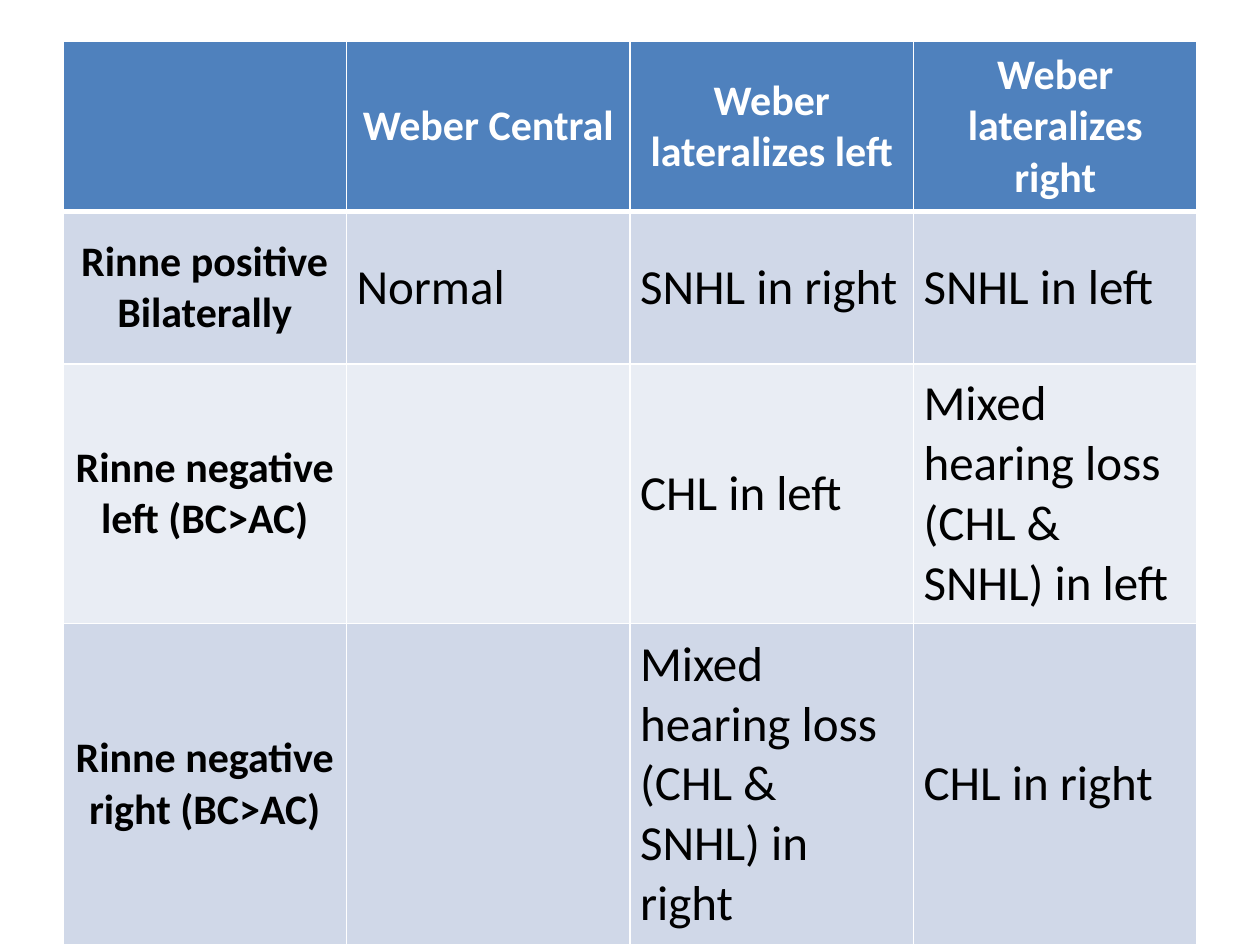
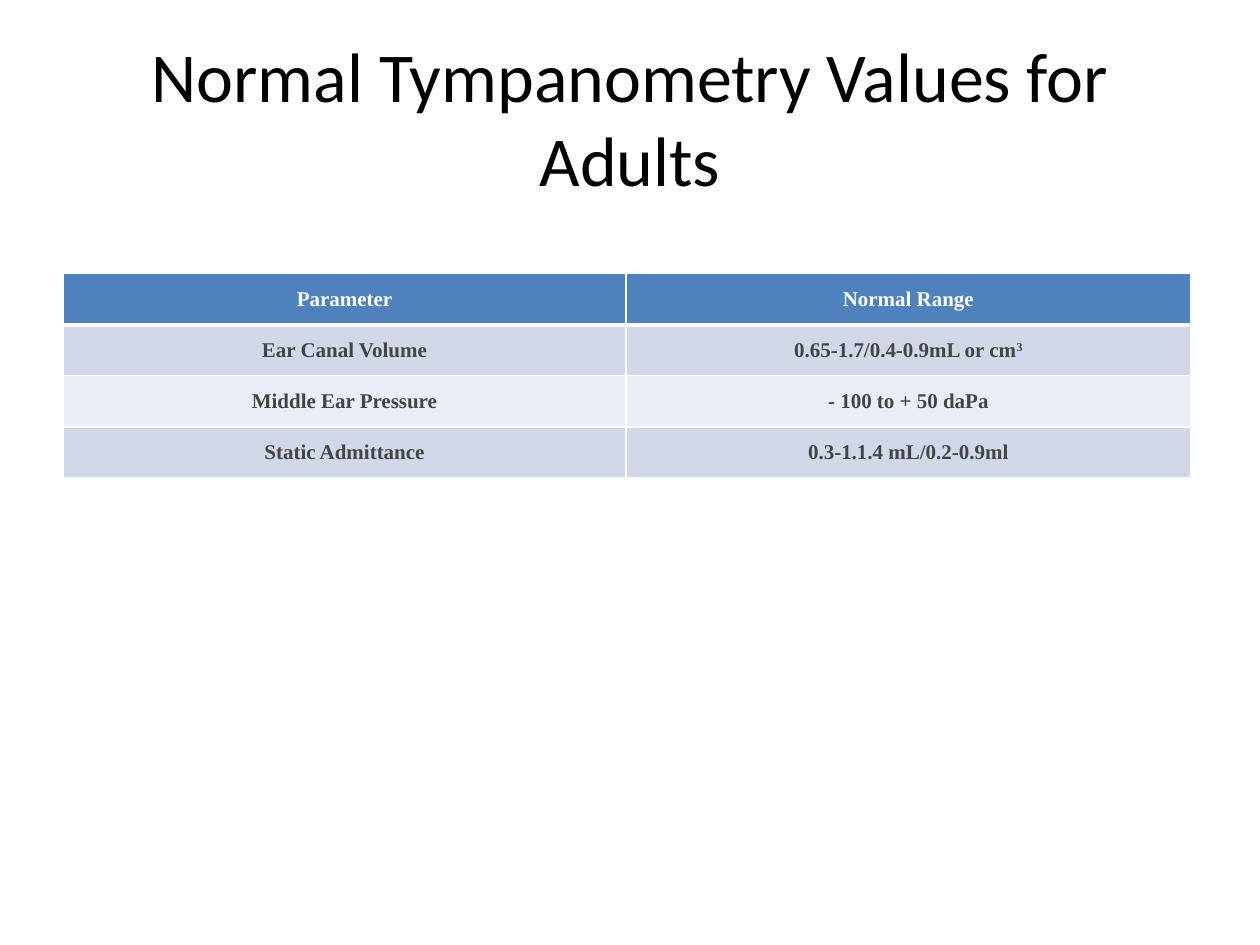
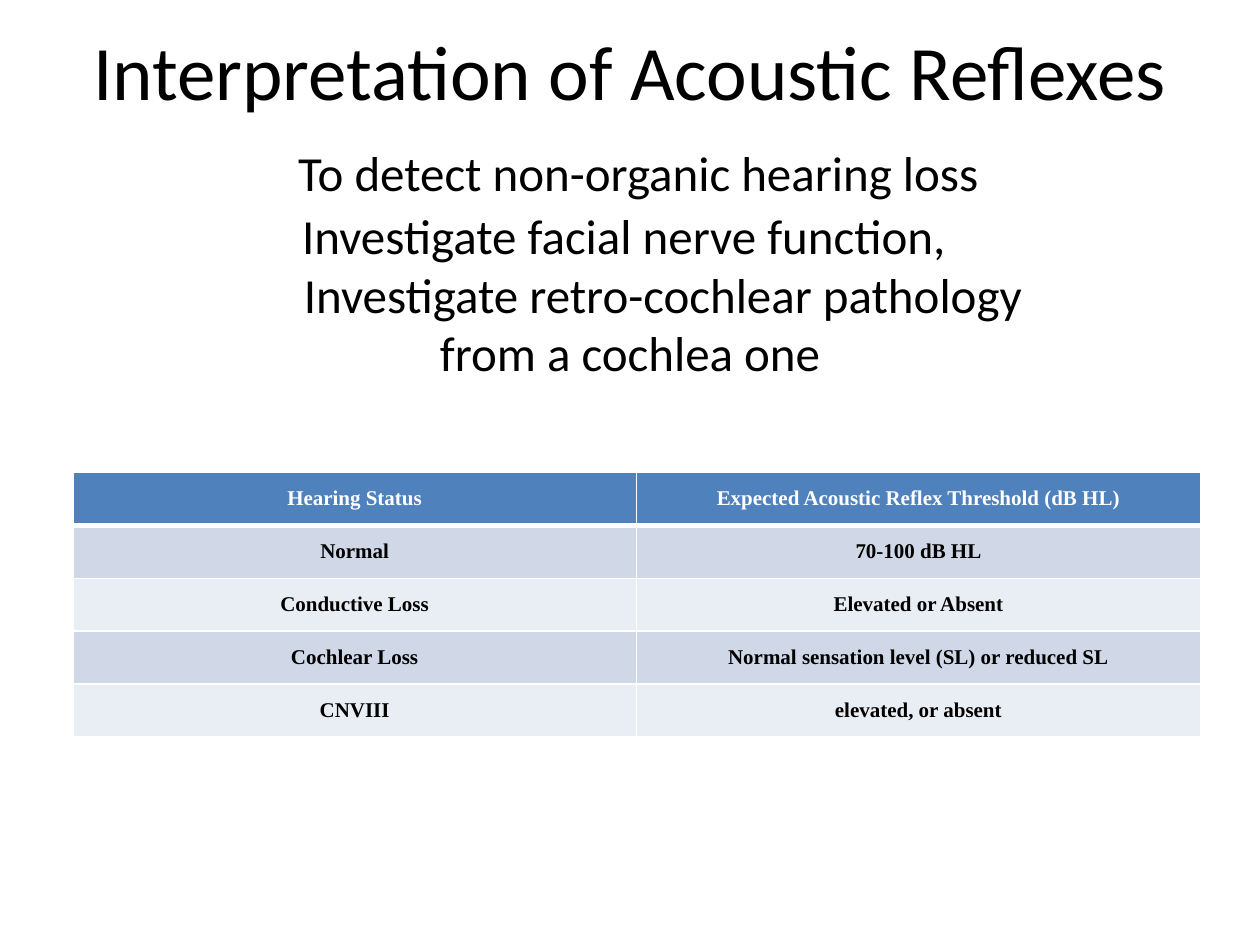
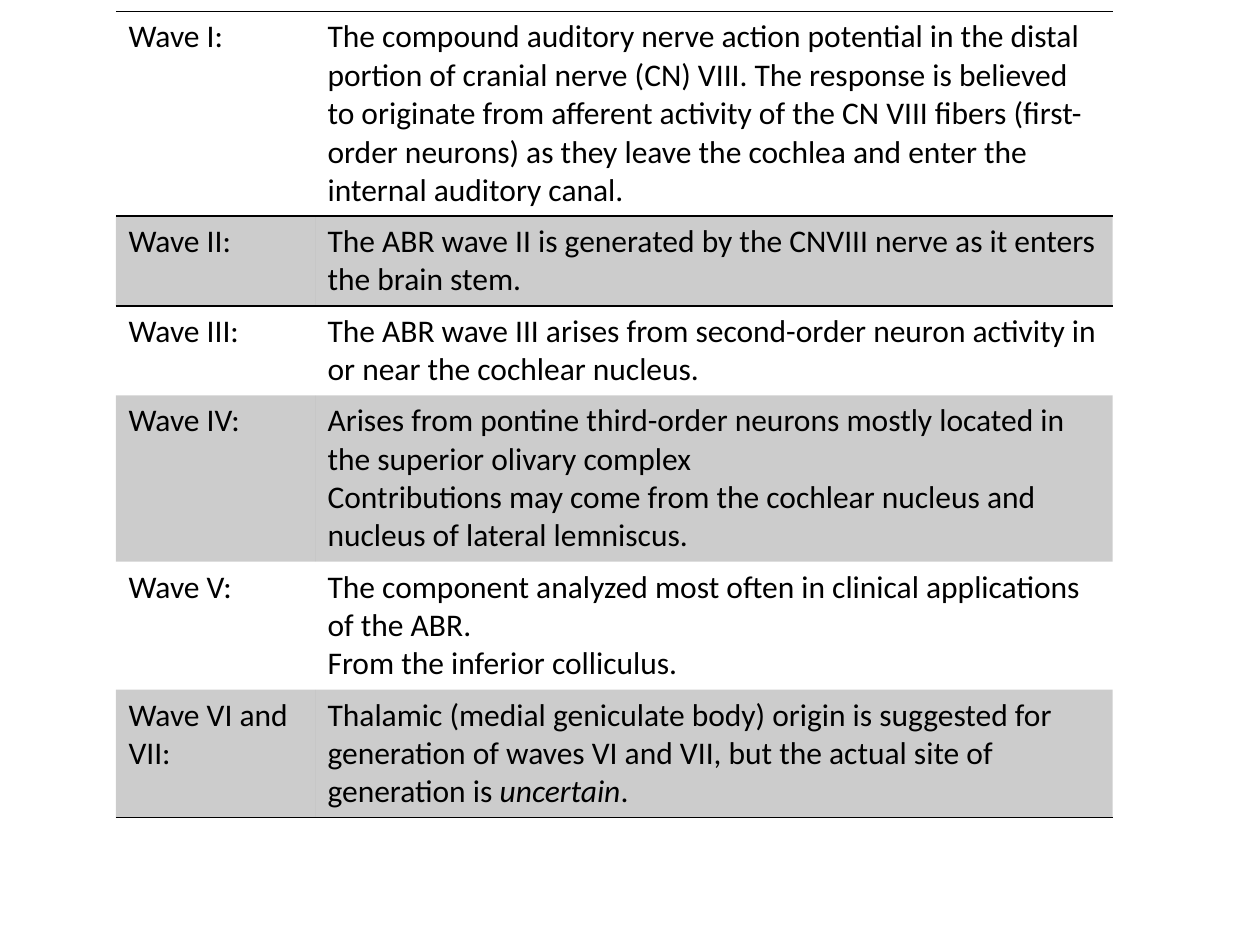
from dataclasses import dataclass, field
from typing import Any, NamedTuple

from lxml.etree import SubElement as Sub
from pptx import Presentation
from pptx.dml.color import RGBColor as Rgb
from pptx.enum.text import MSO_ANCHOR as Anchor, MSO_AUTO_SIZE as Auto, PP_ALIGN as Align
from pptx.oxml import parse_xml
from pptx.oxml.ns import nsdecls, qn
from pptx.util import Emu, Pt

PX = 9144
INK = {"white": "FFFFFF", "black": "000000", "gray": "444444",
       "blue": "4F81BD", "band": "D0D8E8", "pale": "E9EDF4"}
PLAIN = "{2D5ABB26-0587-4C30-8999-92F81FD0307C}"
SIDES = ("L", "R", "T", "B")
TIMES = "Times New Roman"
TITLE, BLANK = 5, 6

HEAD = dict(size=24, ink="white", bold=True, align=Align.CENTER)
KEY = HEAD | dict(ink="black")
BODY = dict(size=28)
SMALL = HEAD | dict(size=12, font=TIMES)
NOTE = dict(size=18)


class Line(NamedTuple):
    text: str
    size: int = 28
    gap: int = 0
    left: int = 0
    right: int = 0


@dataclass
class Grid:
    left: int
    top: int
    cols: list[int]
    tall: list[int]
    rows: list[list[str]]
    head: dict[str, Any]
    key: dict[str, Any]
    body: dict[str, Any]
    pad: tuple[int, int]
    anchor: Any = Anchor.MIDDLE
    blue: bool = True
    mark: dict[str, str] = field(default_factory=dict)


def px(size: int) -> Emu:
    return Emu(size * PX)


def say(para, text: str, *, size: int, font: str = "Calibri", ink: str = "black",
        bold: bool = False, align=Align.LEFT, mark: dict[str, str] | None = None) -> None:
    para.alignment = align
    for spot, part in enumerate(text.split("~")):
        run = para.add_run()
        run.text = part
        run.font.size, run.font.name, run.font.bold = Pt(size), font, bold
        run.font.color.rgb = Rgb.from_string(INK[ink])
        if spot % 2:
            for name, value in (mark or {}).items():
                run._r.get_or_add_rPr().set(name, value)


def edge(cell, ink: str, lines: dict[str, int]) -> None:
    props = cell._tc.get_or_add_tcPr()
    sides = [side for side in SIDES if side in lines]
    for spot, side in enumerate(sides):
        props.insert(spot, parse_xml(
            f'<a:ln{side} {nsdecls("a")} w="{Pt(lines[side])}"><a:solidFill>'
            f'<a:srgbClr val="{INK[ink]}"/></a:solidFill></a:ln{side}>'))


def tint(cell, ink: str, alpha: int = 100) -> None:
    cell.fill.solid()
    cell.fill.fore_color.rgb = Rgb.from_string(INK[ink])
    if alpha < 100:
        color = cell._tc.tcPr.find(".//" + qn("a:srgbClr"))
        Sub(color, qn("a:alpha")).set("val", str(alpha * 1000))


def dress(cell, row: int, last: int, blue: bool) -> None:
    if blue:
        tint(cell, "blue" if row == 0 else "band" if row % 2 else "pale")
        edge(cell, "white", {"L": 1, "R": 1, "T": 3 if row == 1 else 1,
                             "B": 3 if row == 0 else 1})
        return
    if row % 2:
        tint(cell, "black", 20)
    else:
        cell.fill.background()
    lines = {0: {"T": 1, "B": 1}, 1: {"T": 1}, last: {"B": 1}}
    edge(cell, "black", lines.get(row, {}))


def draw(slide, grid: Grid) -> None:
    table = slide.shapes.add_table(
        len(grid.rows), len(grid.cols), px(grid.left), px(grid.top),
        px(sum(grid.cols)), px(sum(grid.tall))).table
    table._tbl.tblPr.find(qn("a:tableStyleId")).text = PLAIN
    table.first_row = grid.blue
    for col, wide in zip(table.columns, grid.cols):
        col.width = px(wide)
    for row, tall in zip(table.rows, grid.tall):
        row.height = px(tall)
    side, edge_pad = map(px, grid.pad)
    for r, row in enumerate(grid.rows):
        for c, text in enumerate(row):
            cell = table.cell(r, c)
            cell.margin_left = cell.margin_right = side
            cell.margin_top = cell.margin_bottom = edge_pad
            cell.vertical_anchor = grid.anchor
            look = grid.head if r == 0 else grid.key if c == 0 else grid.body
            frame = cell.text_frame
            for n, part in enumerate(text.split("\n") if text else []):
                para = frame.add_paragraph() if n else frame.paragraphs[0]
                say(para, part, mark=grid.mark, **look)
            dress(cell, r, len(grid.rows) - 1, grid.blue)


def title(slide, tall: int, lines: list[Line], foot: int = 5) -> None:
    box = slide.shapes.title
    box.left, box.top, box.width, box.height = map(px, (50, 30, 900, tall))
    frame = box.text_frame
    frame.word_wrap, frame.auto_size = True, Auto.NONE
    frame.vertical_anchor = Anchor.MIDDLE
    frame.margin_bottom = px(foot)
    for n, line in enumerate(lines):
        para = frame.add_paragraph() if n else frame.paragraphs[0]
        props = para._p.get_or_add_pPr()
        props.set("marL", str(px(line.left)))
        props.set("marR", str(px(line.right)))
        if line.gap:
            para.space_before = px(line.gap)
        say(para, line.text, size=line.size, align=Align.CENTER)


TUNING = Grid(
    50, 33, [225] * 4, [135, 121, 206, 255],
    [["", "Weber Central", "Weber lateralizes left", "Weber lateralizes right"],
     ["Rinne positive\nBilaterally", "Normal", "SNHL in right", "SNHL in left"],
     ["Rinne negative left (BC>AC)", "", "CHL in left",
      "Mixed hearing loss (CHL & SNHL) in left"],
     ["Rinne negative right (BC>AC)", "",
      "Mixed hearing loss (CHL & SNHL) in right", "CHL in right"]],
    HEAD, KEY, BODY, (8, 4))

GRAY = SMALL | dict(ink="gray")
TYMP = Grid(
    50, 217, [447, 448], [41, 40, 41, 40],
    [["Parameter", "Normal Range"],
     ["Ear Canal Volume", "0.65-1.7/0.4-0.9mL or cm~3~"],
     ["Middle Ear Pressure", "- 100 to + 50 daPa"],
     ["Static Admittance", "0.3-1.1.4 mL/0.2-0.9ml"]],
    SMALL, GRAY, GRAY, (7, 0), mark={"baseline": "30000"})

DARK = SMALL | dict(ink="black")
REFLEX = Grid(
    58, 375, [447, 448], [42] * 5,
    [["Hearing Status", "Expected Acoustic Reflex Threshold (dB HL)"],
     ["Normal", "70-100 dB HL"],
     ["Conductive Loss", "Elevated or Absent"],
     ["Cochlear Loss", "Normal sensation level (SL) or reduced SL"],
     ["CNVIII", "elevated, or absent"]],
    SMALL, DARK, DARK, (7, 0))

WAVES = Grid(
    92, 9, [158, 633], [160, 70, 70, 130, 100, 100],
    [["Wave I:", "The compound auditory nerve action potential in the distal portion of "
      "cranial nerve (CN) VIII. The response is believed to originate from afferent "
      "activity of the CN VIII fibers (first-order neurons) as they leave the cochlea "
      "and enter the internal auditory canal."],
     ["Wave II:", "The ABR wave II is generated by the CNVIII nerve as it enters "
      "the brain stem."],
     ["Wave III:", "The ABR wave III arises from second-order neuron activity in or "
      "near the cochlear nucleus."],
     ["Wave IV:", "Arises from pontine third-order neurons mostly located in the "
      "superior olivary complex\nContributions may come from the cochlear nucleus and "
      "nucleus of lateral lemniscus."],
     ["Wave V:", "The component analyzed most often in clinical applications of the "
      "ABR.\nFrom the inferior colliculus."],
     ["Wave VI and VII:", "Thalamic (medial geniculate body) origin is suggested for "
      "generation of waves VI and VII, but the actual site of generation is "
      "~uncertain~."]],
    NOTE, NOTE, NOTE, (10, 5), Anchor.TOP, False, {"i": "1"})

AIMS = [
    Line("Interpretation of Acoustic Reflexes", 44),
    Line("To detect non-organic hearing loss", gap=21, left=13),
    Line("Investigate facial nerve function,", gap=3, right=10),
    Line("Investigate retro-cochlear pathology", left=52),
    Line("from a cochlea one"),
]


def main() -> None:
    deck = Presentation()
    deck.slide_width, deck.slide_height = px(1000), px(750)
    pages = [(TUNING, 0, [], 5),
             (TYMP, 125, [Line("Normal Tympanometry Values for Adults", 40)], 5),
             (REFLEX, 303, AIMS, 46),
             (WAVES, 0, [], 5)]
    for grid, tall, lines, foot in pages:
        slide = deck.slides.add_slide(deck.slide_layouts[TITLE if lines else BLANK])
        if lines:
            title(slide, tall, lines, foot)
        draw(slide, grid)
    deck.save("out.pptx")


if __name__ == "__main__":
    main()
